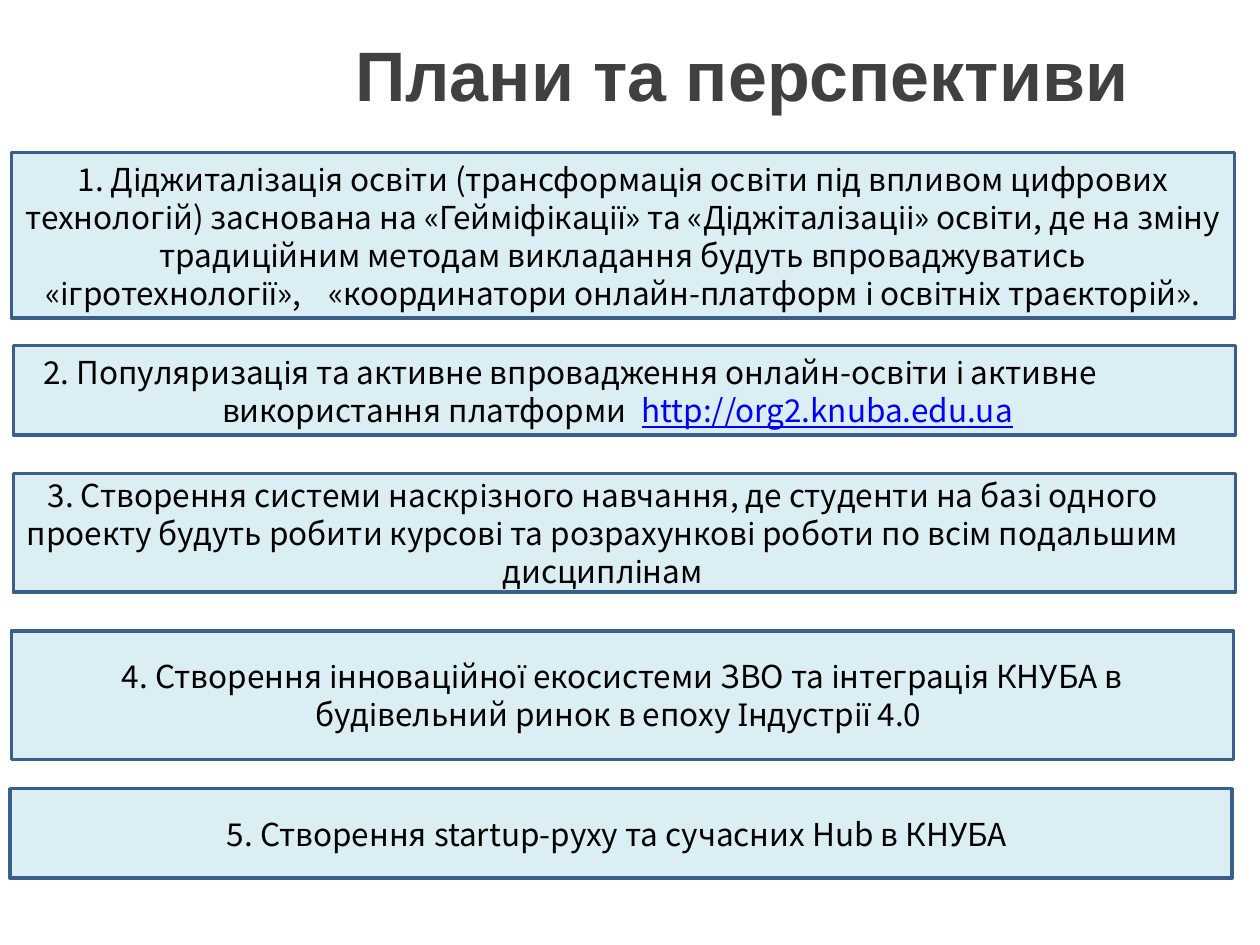
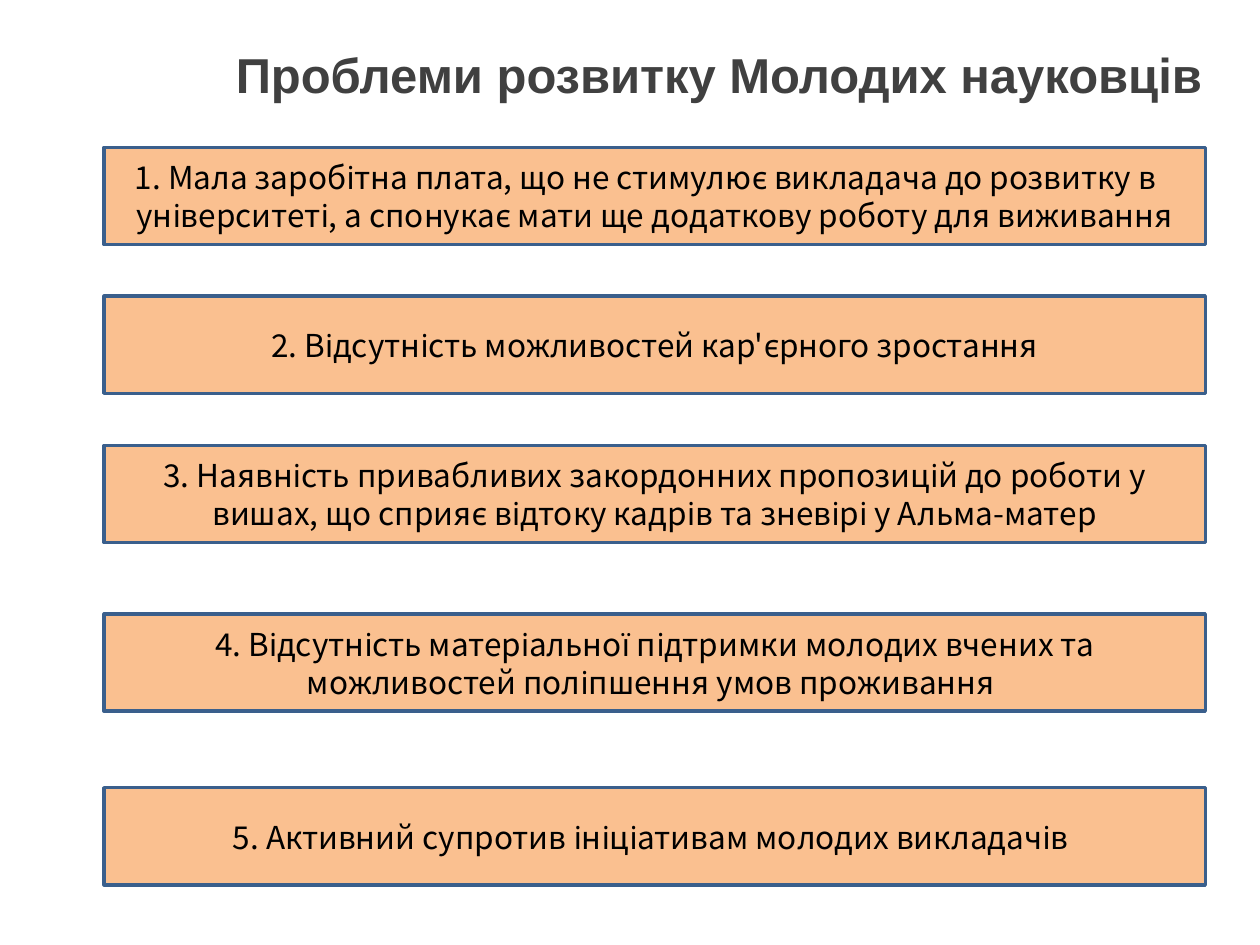
from dataclasses import dataclass

from pptx import Presentation
from pptx.dml.color import RGBColor
from pptx.enum.shapes import MSO_SHAPE
from pptx.enum.text import MSO_ANCHOR, MSO_AUTO_SIZE, PP_ALIGN
from pptx.util import Cm, Pt

RECTANGLE = MSO_SHAPE.RECTANGLE
MIDDLE = MSO_ANCHOR.MIDDLE
NO_FIT = MSO_AUTO_SIZE.NONE
CENTER, LEFT = PP_ALIGN.CENTER, PP_ALIGN.LEFT
TITLE_ONLY = 5

# Content: each item is a list of runs; a number is a space widened by that many points
PLANS_TITLE = "Плани та перспективи"
PLANS = [
    ["1. Діджиталізація освіти (трансформація освіти під впливом цифрових\n"
     "технологій) заснована на «Гейміфікації» та «Діджіталізаціі» освіти, де на зміну "
     "традиційним методам викладання будуть впроваджуватись\n"
     "«ігротехнології»,", 11.4, "«координатори онлайн-платформ і освітніх траєкторій»."],
    ["2. Популяризація та активне впровадження онлайн-освіти і активне\n"
     "використання платформи", 4.5, "http://org2.knuba.edu.ua"],
    ["3. Створення системи наскрізного навчання, де студенти на базі одного "
     "проекту будуть робити курсові та розрахункові роботи по всім подальшим "
     "дисциплінам"],
    ["4. Створення інноваційної екосистеми ЗВО та інтеграція КНУБА в "
     "будівельний ринок в епоху Індустрії 4.0"],
    ["5. Створення startup-руху та сучасних Hub в КНУБА"],
]
PROBLEMS_TITLE = "Проблеми розвитку Молодих науковців"
PROBLEMS = [
    ["1. Мала заробітна плата, що не стимулює викладача до розвитку в "
     "університеті, а спонукає мати ще додаткову роботу для виживання"],
    ["2. Відсутність можливостей кар'єрного зростання"],
    ["3. Наявність привабливих закордонних пропозицій до роботи у вишах, "
     "що сприяє відтоку кадрів та зневірі у Альма-матер"],
    ["4. Відсутність матеріальної підтримки молодих вчених та "
     "можливостей поліпшення умов проживання"],
    ["5. Активний супротив ініціативам молодих викладачів"],
]

# Places in centimetres: left, top, width, height
TITLE_PLACE = (4.5, 0, 20.9, 2.97)
PLAN_PLACES = [
    (0.23, 3.08, 24.66, 3.33),
    (0.27, 6.97, 24.64, 1.8),
    (0.27, 9.55, 24.64, 2.39),
    (0.23, 12.72, 24.64, 2.59),
    (0.2, 15.9, 24.64, 1.8),
]
PROBLEM_PLACES = [(2.1, top, 22.2, 1.96) for top in (2.97, 5.97, 8.98, 12.38, 15.88)]

# Paragraph indents in centimetres: left, right, first line
PLAN_INDENTS = [(0, 0, -1.69), (1.9, 2.18, -1.9), (0, 0.88, 0), (0, 0.16, 0.16), (0, 0.16, 0)]
PROBLEM_INDENTS = [(0.36, 0.36, -0.36), (0, 0, 0), (0, 0, 0), (0, 0.16, 0.16), (0, 0.16, 0)]


@dataclass(frozen=True)
class Theme:
    title_font: str = "Arial"
    body_font: str = "Noto Sans CJK KR"
    title_color: RGBColor = RGBColor(0x40, 0x40, 0x40)
    text_color: RGBColor = RGBColor(0, 0, 0)
    address_color: RGBColor = RGBColor(0, 0, 0xFF)
    border_color: RGBColor = RGBColor(0x3A, 0x5F, 0x8C)
    plan_fill: RGBColor = RGBColor(0xDB, 0xEE, 0xF4)
    problem_fill: RGBColor = RGBColor(0xFA, 0xC0, 0x90)
    plan_title_size: Pt = Pt(40)
    problem_title_size: Pt = Pt(28)
    body_size: Pt = Pt(18)
    line_height: Pt = Pt(21.7)
    border_width: Pt = Pt(2)


THEME = Theme()


def add_run(paragraph, text, name, size, color, bold=False, underline=False):
    run = paragraph.add_run()
    run.text = text
    font = run.font
    font.name, font.size, font.bold, font.underline = name, size, bold, underline
    font.color.rgb = color
    return run


def add_body_run(paragraph, text, color=THEME.text_color, underline=False):
    return add_run(paragraph, text, THEME.body_font, THEME.body_size, color,
                   underline=underline)


def set_indents(paragraph, indents):
    properties = paragraph._p.get_or_add_pPr()
    for name, length in zip(("marL", "marR", "indent"), indents):
        properties.set(name, str(int(Cm(length))))


def set_title(slide, text, size, alignment):
    title = slide.shapes.title
    title.left, title.top, title.width, title.height = map(Cm, TITLE_PLACE)
    frame = title.text_frame
    frame.vertical_anchor = MIDDLE
    frame.auto_size = NO_FIT
    paragraph = frame.paragraphs[0]
    paragraph.alignment = alignment
    add_run(paragraph, text, THEME.title_font, size, THEME.title_color, bold=True)


def fill_paragraph(paragraph, runs):
    for part in runs:
        if isinstance(part, float):
            gap = add_body_run(paragraph, " ")
            gap._r.get_or_add_rPr().set("spc", str(round(part * 100)))
        elif part.startswith("http"):
            add_body_run(paragraph, part, THEME.address_color, underline=True)
        else:
            for index, line in enumerate(part.split("\n")):
                if index:
                    paragraph.add_line_break()
                add_body_run(paragraph, line)


def add_box(slide, runs, place, indents, fill):
    shape = slide.shapes.add_shape(RECTANGLE, *map(Cm, place))
    shape.shadow.inherit = False
    shape.fill.solid()
    shape.fill.fore_color.rgb = fill
    shape.line.color.rgb = THEME.border_color
    shape.line.width = THEME.border_width
    frame = shape.text_frame
    frame.word_wrap = True
    frame.vertical_anchor = MIDDLE
    paragraph = frame.paragraphs[0]
    paragraph.alignment = CENTER
    paragraph.line_spacing = THEME.line_height
    set_indents(paragraph, indents)
    fill_paragraph(paragraph, runs)


def add_list_slide(presentation, title, size, alignment, boxes, fill):
    slide = presentation.slides.add_slide(presentation.slide_layouts[TITLE_ONLY])
    set_title(slide, title, size, alignment)
    for runs, place, indents in boxes:
        add_box(slide, runs, place, indents, fill)


def main():
    presentation = Presentation()
    presentation.slide_width, presentation.slide_height = Cm(25.4), Cm(19.05)
    add_list_slide(presentation, PLANS_TITLE, THEME.plan_title_size, CENTER,
                   zip(PLANS, PLAN_PLACES, PLAN_INDENTS), THEME.plan_fill)
    add_list_slide(presentation, PROBLEMS_TITLE, THEME.problem_title_size, LEFT,
                   zip(PROBLEMS, PROBLEM_PLACES, PROBLEM_INDENTS), THEME.problem_fill)
    presentation.save("out.pptx")


if __name__ == "__main__":
    main()
